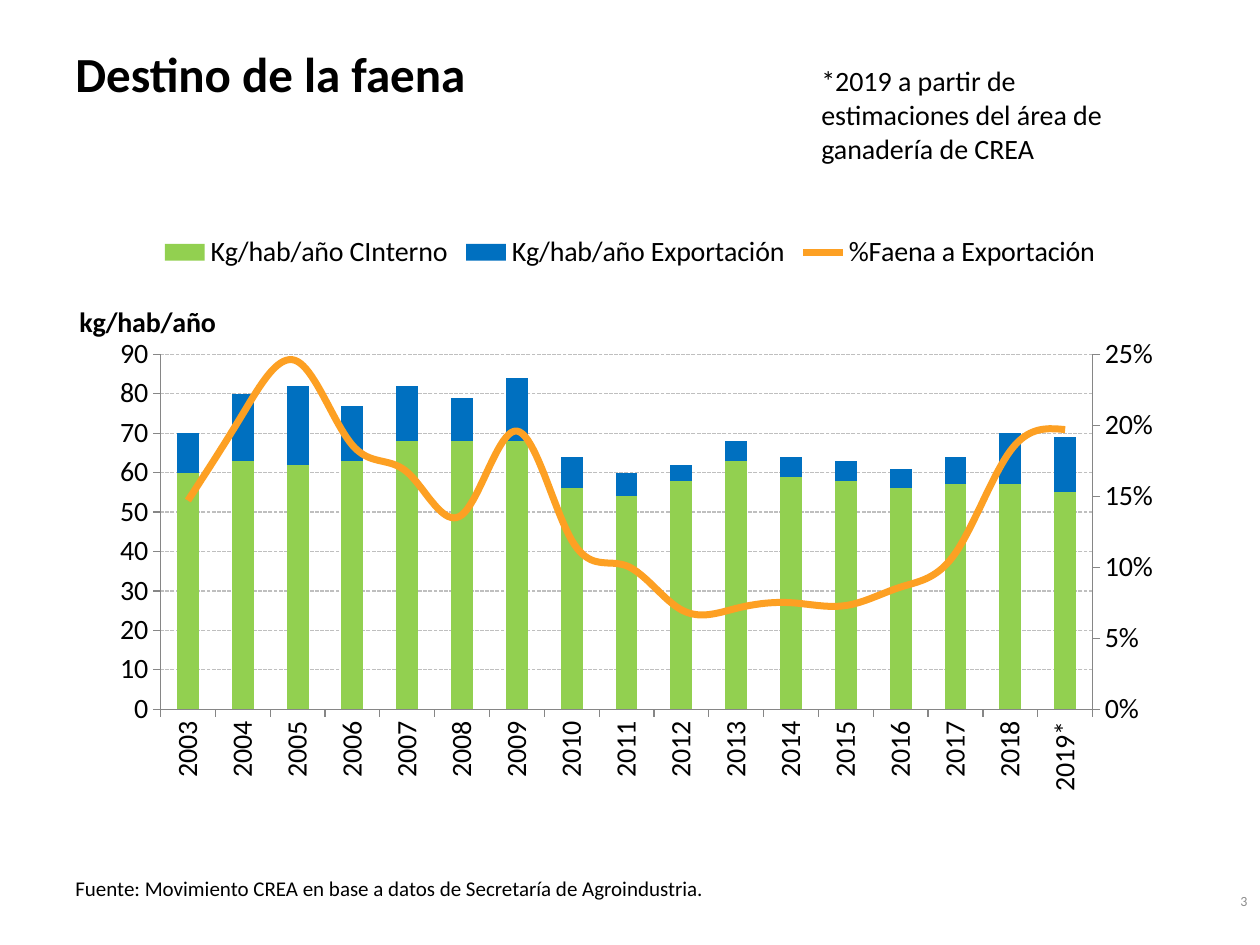
from copy import deepcopy
from dataclasses import dataclass

from pptx import Presentation
from pptx import util as u
from pptx.chart import axis, data
from pptx.dml.color import RGBColor
from pptx.enum import chart as charts, dml, text
from pptx.oxml import parse_xml
from pptx.oxml.ns import nsdecls, qn


@dataclass(frozen=True)
class Theme:
    font: str = "Calibri"
    ink: str = "000000"
    muted: str = "8C8C8C"
    axis: str = "868686"
    grid: str = "BFBFBF"
    domestic: str = "92D050"
    export: str = "0070C0"
    share: str = "FDA023"
    title: int = 28
    body: int = 16
    source: int = 12
    number: int = 8


THEME = Theme()
WIDTH, HEIGHT = u.Inches(10), u.Inches(7.5)
COLUMNS, ROWS = 20, 25

YEARS = [str(year) for year in range(2003, 2019)] + ["2019*"]
DOMESTIC = [60, 63, 62, 63, 68, 68, 68, 56, 54, 58, 63, 59, 58, 56, 57, 57, 55]
EXPORT = [10, 17, 20, 14, 14, 11, 16, 8, 6, 4, 5, 5, 5, 5, 7, 13, 14]
SHARE = [0.147, 0.208, 0.245, 0.186, 0.167, 0.137, 0.196, 0.119, 0.101,
         0.07, 0.071, 0.075, 0.073, 0.086, 0.11, 0.182, 0.197]


def grid(column, row, columns, rows):
    return (int(WIDTH * column / COLUMNS), int(HEIGHT * row / ROWS),
            int(WIDTH * columns / COLUMNS), int(HEIGHT * rows / ROWS))


def apply(target, values):
    for name, value in values.items():
        setattr(target, name, value)


def style_font(font, size, color=THEME.ink, bold=False):
    apply(font, {"name": THEME.font, "size": u.Pt(size), "bold": bold})
    font.color.rgb = RGBColor.from_string(color)


def add_text(page, area, words, size, color=THEME.ink, bold=False,
             align=text.PP_ALIGN.LEFT, anchor=text.MSO_ANCHOR.TOP):
    frame = page.shapes.add_textbox(*area).text_frame
    apply(frame, {"word_wrap": True, "vertical_anchor": anchor})
    para = frame.paragraphs[0]
    para.alignment = align
    span = para.add_run()
    span.text = words
    style_font(span.font, size, color, bold)


def place(element, index, target, **shares):
    for old in element.findall(qn("c:layout")):
        element.remove(old)
    inner = f'<c:layoutTarget val="{target}"/>' if target else ""
    modes = "".join(f'<c:{key}Mode val="edge"/>' for key in "xy")
    sizes = "".join(f'<c:{key} val="{value}"/>' for key, value in shares.items())
    element.insert(index, parse_xml(
        f'<c:layout {nsdecls("c")}><c:manualLayout>{inner}{modes}{sizes}'
        "</c:manualLayout></c:layout>"))


def style_axis(scale):
    scale.major_tick_mark = charts.XL_TICK_MARK.OUTSIDE
    scale.minor_tick_mark = charts.XL_TICK_MARK.NONE
    scale.format.line.color.rgb = RGBColor.from_string(THEME.axis)
    scale.format.line.width = u.Pt(0.75)
    style_font(scale.tick_labels.font, THEME.body)


def style_left_axis(scale):
    apply(scale, {"minimum_scale": 0, "maximum_scale": 90, "major_unit": 10,
                  "has_major_gridlines": True})
    apply(scale.tick_labels, {"number_format": "0", "number_format_is_linked": False})
    line = scale.major_gridlines.format.line
    line.color.rgb = RGBColor.from_string(THEME.grid)
    apply(line, {"width": u.Pt(0.75), "dash_style": dml.MSO_LINE.SQUARE_DOT})


def add_axis_title(scale, words):
    frame = scale.axis_title.text_frame
    frame.text = words
    style_font(frame.paragraphs[0].runs[0].font, THEME.body, bold=True)
    frame._txBody.bodyPr.set("rot", "0")
    place(scale.axis_title._element, 1, None, x=0.01, y=0.13)


def add_right_axis(chart):
    left, bottom = chart.value_axis._element, chart.category_axis._element
    right, hidden = deepcopy(left), deepcopy(bottom)
    for element, own, other in ((right, "201", "202"), (hidden, "202", "201")):
        element.find(qn("c:axId")).set("val", own)
        element.find(qn("c:crossAx")).set("val", other)
    right.find(qn("c:axPos")).set("val", "r")
    right.find(qn("c:crosses")).set("val", "max")
    left.addnext(right)
    right.addnext(hidden)
    axis.CategoryAxis(hidden).visible = False
    scale = axis.ValueAxis(right)
    apply(scale, {"maximum_scale": 0.25, "major_unit": 0.05,
                  "has_major_gridlines": False})
    scale.tick_labels.number_format = "0%"


def move_share_to_line(chart):
    bars = chart.plots[0]._element
    series = bars.findall(qn("c:ser"))[-1]
    for element in series.findall(qn("c:invertIfNegative")):
        series.remove(element)
    line = parse_xml(
        f'<c:lineChart {nsdecls("c")}><c:grouping val="standard"/>'
        '<c:varyColors val="0"/><c:marker val="1"/>'
        '<c:axId val="202"/><c:axId val="201"/></c:lineChart>')
    line.insert(2, series)
    bars.addnext(line)


def style_series(chart):
    bars, lines = chart.plots
    apply(bars, {"gap_width": 150, "overlap": 100, "vary_by_categories": False})
    for series, color in zip(bars.series, (THEME.domestic, THEME.export)):
        series.format.fill.solid()
        series.format.fill.fore_color.rgb = RGBColor.from_string(color)
    share = lines.series[0]
    share.smooth = True
    share.marker.style = charts.XL_MARKER_STYLE.NONE
    share.format.line.color.rgb = RGBColor.from_string(THEME.share)
    share.format.line.width = u.Pt(4)


def add_slaughter_chart(page, area):
    values = data.CategoryChartData()
    values.categories = YEARS
    values.add_series("Kg/hab/año CInterno", DOMESTIC, "0")
    values.add_series("Kg/hab/año Exportación", EXPORT, "0")
    values.add_series("%Faena a Exportación", SHARE, "0.0%")
    chart = page.shapes.add_chart(
        charts.XL_CHART_TYPE.COLUMN_STACKED, *area, values).chart
    apply(chart, {"has_title": False, "has_legend": True})
    style_font(chart.font, THEME.body)
    apply(chart.legend, {"position": charts.XL_LEGEND_POSITION.TOP,
                         "include_in_layout": False})
    style_font(chart.legend.font, THEME.body)
    for scale in (chart.category_axis, chart.value_axis):
        style_axis(scale)
    chart.category_axis._element.txPr.bodyPr.set("rot", "-5400000")
    style_left_axis(chart.value_axis)
    move_share_to_line(chart)
    add_right_axis(chart)
    add_axis_title(chart.value_axis, "kg/hab/año")
    style_series(chart)
    place(chart._chartSpace.chart.plotArea, 0, "inner",
          x=0.086, y=0.226, w=0.822, h=0.598)


def add_header(page):
    add_text(page, grid(1, 1, 18, 4.17), "Destino de la faena", THEME.title, bold=True)
    add_text(page, grid(12.84, 1.53, 5.82, 2.1),
             "*2019 a partir de estimaciones del área de ganadería de CREA",
             THEME.body)


def add_footer(page):
    add_text(page, grid(1, 23, 16.48, 1.4),
             "Fuente: Movimiento CREA en base a datos de Secretaría de Agroindustria.",
             THEME.source)
    add_text(page, grid(15.34, 23.17, 4.66, 1.33), "3", THEME.number, THEME.muted,
             align=text.PP_ALIGN.RIGHT, anchor=text.MSO_ANCHOR.MIDDLE)


def main():
    deck = Presentation()
    apply(deck, {"slide_width": WIDTH, "slide_height": HEIGHT})
    page = deck.slides.add_slide(deck.slide_layouts[6])
    add_header(page)
    add_slaughter_chart(page, grid(1, 5.83, 18, 15.7))
    add_footer(page)
    deck.save("out.pptx")


if __name__ == "__main__":
    main()
